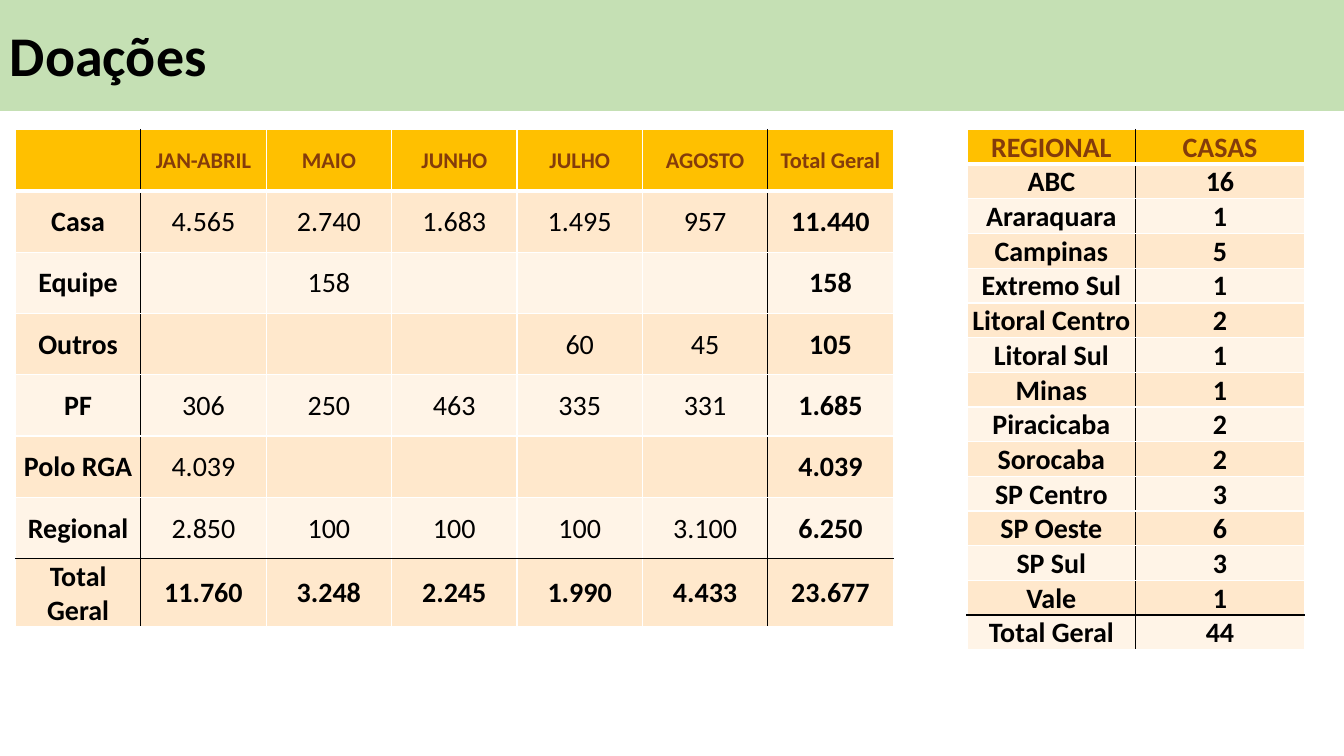
from dataclasses import dataclass

from lxml.etree import SubElement as Sub
from pptx import Presentation
from pptx.dml.color import RGBColor as Rgb
from pptx.enum.shapes import MSO_SHAPE as Shape
from pptx.enum.text import MSO_ANCHOR as Anchor, PP_ALIGN as Align
from pptx.oxml.ns import qn
from pptx.util import Pt

FONT = "Calibri"
COLORS = {
    "band": "C5E0B4",
    "head": "FFC000",
    "odd": "FFE8CC",
    "even": "FFF4E7",
    "brown": "843C0B",
    "black": "000000",
    "white": "FFFFFF",
}


@dataclass
class Grid:
    left: float
    top: float
    col: float  # column width
    row: float  # row height
    rules: set[int]  # columns with a black line on their right
    bold: set[int]  # columns set in bold
    head: int  # size of the header text
    rows: list[list[str]]


def write(frame, text: str, *, size: float, color: str = "black",
          bold: bool = True, align=Align.LEFT) -> None:
    para = frame.paragraphs[0]
    para.alignment = align
    run = para.add_run()
    run.text = text
    font = run.font
    font.name, font.size, font.bold = FONT, Pt(size), bold
    font.color.rgb = Rgb.from_string(COLORS[color])


def edge(cell, side: str, color: str, width: float = 1) -> None:
    line = Sub(cell._tc.get_or_add_tcPr(), qn(f"a:ln{side}"), w=str(Pt(width)))
    fill = Sub(line, qn("a:solidFill"))
    Sub(fill, qn("a:srgbClr"), val=COLORS[color])


def draw(slide, grid: Grid) -> None:
    rows, cols = len(grid.rows), len(grid.rows[0])
    last = rows - 1
    table = slide.shapes.add_table(
        rows, cols, Pt(grid.left), Pt(grid.top),
        Pt(grid.col * cols), Pt(grid.row * rows)).table
    table.horz_banding = False
    for col in table.columns:
        col.width = Pt(grid.col)
    for row in table.rows:
        row.height = Pt(grid.row)

    for r, line in enumerate(grid.rows):
        for c, text in enumerate(line):
            cell = table.cell(r, c)
            # Borders, which come before the fill
            edge(cell, "L", "black" if c - 1 in grid.rules else "white")
            edge(cell, "R", "black" if c in grid.rules else "white")
            edge(cell, "T", "black" if r == last else "white")
            edge(cell, "B", "black" if r == last - 1 else "white",
                 1 if r else 3)
            # Fill
            shade = "head" if r == 0 else "odd" if r % 2 else "even"
            cell.fill.solid()
            cell.fill.fore_color.rgb = Rgb.from_string(COLORS[shade])
            # Text
            cell.vertical_anchor = Anchor.MIDDLE
            cell.margin_left = cell.margin_right = cell.margin_top = Pt(0.75)
            cell.margin_bottom = 0
            if text:
                write(cell.text_frame, text,
                      size=20 if r else grid.head,
                      color="black" if r else "brown",
                      bold=r in (0, last) or c in grid.bold,
                      align=Align.CENTER)


GIFTS = Grid(11, 92.5, 89.6, 43.8, {0, 5}, {0, 6}, 16, [
    ["", "JAN-ABRIL", "MAIO", "JUNHO", "JULHO", "AGOSTO", "Total Geral"],
    ["Casa", "4.565", "2.740", "1.683", "1.495", "957", "11.440"],
    ["Equipe", "", "158", "", "", "", "158"],
    ["Outros", "", "", "", "60", "45", "105"],
    ["PF", "306", "250", "463", "335", "331", "1.685"],
    ["Polo RGA", "4.039", "", "", "", "", "4.039"],
    ["Regional", "2.850", "100", "100", "100", "3.100", "6.250"],
    ["Total Geral", "11.760", "3.248", "2.245", "1.990", "4.433", "23.677"],
])

HOMES = Grid(690.75, 92.5, 120.5, 24.77, {0}, {0, 1}, 20, [
    ["REGIONAL", "CASAS"],
    ["ABC", "16"],
    ["Araraquara", "1"],
    ["Campinas", "5"],
    ["Extremo Sul", "1"],
    ["Litoral Centro", "2"],
    ["Litoral Sul", "1"],
    ["Minas", "1"],
    ["Piracicaba", "2"],
    ["Sorocaba", "2"],
    ["SP Centro", "3"],
    ["SP Oeste", "6"],
    ["SP Sul", "3"],
    ["Vale", "1"],
    ["Total Geral", "44"],
])


def main() -> None:
    deck = Presentation()
    deck.slide_width, deck.slide_height = Pt(960), Pt(540)
    slide = deck.slides.add_slide(deck.slide_layouts[6])

    # Title band
    band = slide.shapes.add_shape(Shape.RECTANGLE, 0, 0, Pt(960), Pt(79.2))
    band.shadow.inherit = False
    band.fill.solid()
    band.fill.fore_color.rgb = Rgb.from_string(COLORS["band"])
    band.line.fill.background()

    # Title
    title = slide.shapes.add_textbox(0, Pt(10.8), Pt(960), Pt(55.7))
    title.text_frame.word_wrap = True
    write(title.text_frame, "Doações", size=40)

    # Tables
    for grid in (GIFTS, HOMES):
        draw(slide, grid)

    deck.save("out.pptx")


if __name__ == "__main__":
    main()
